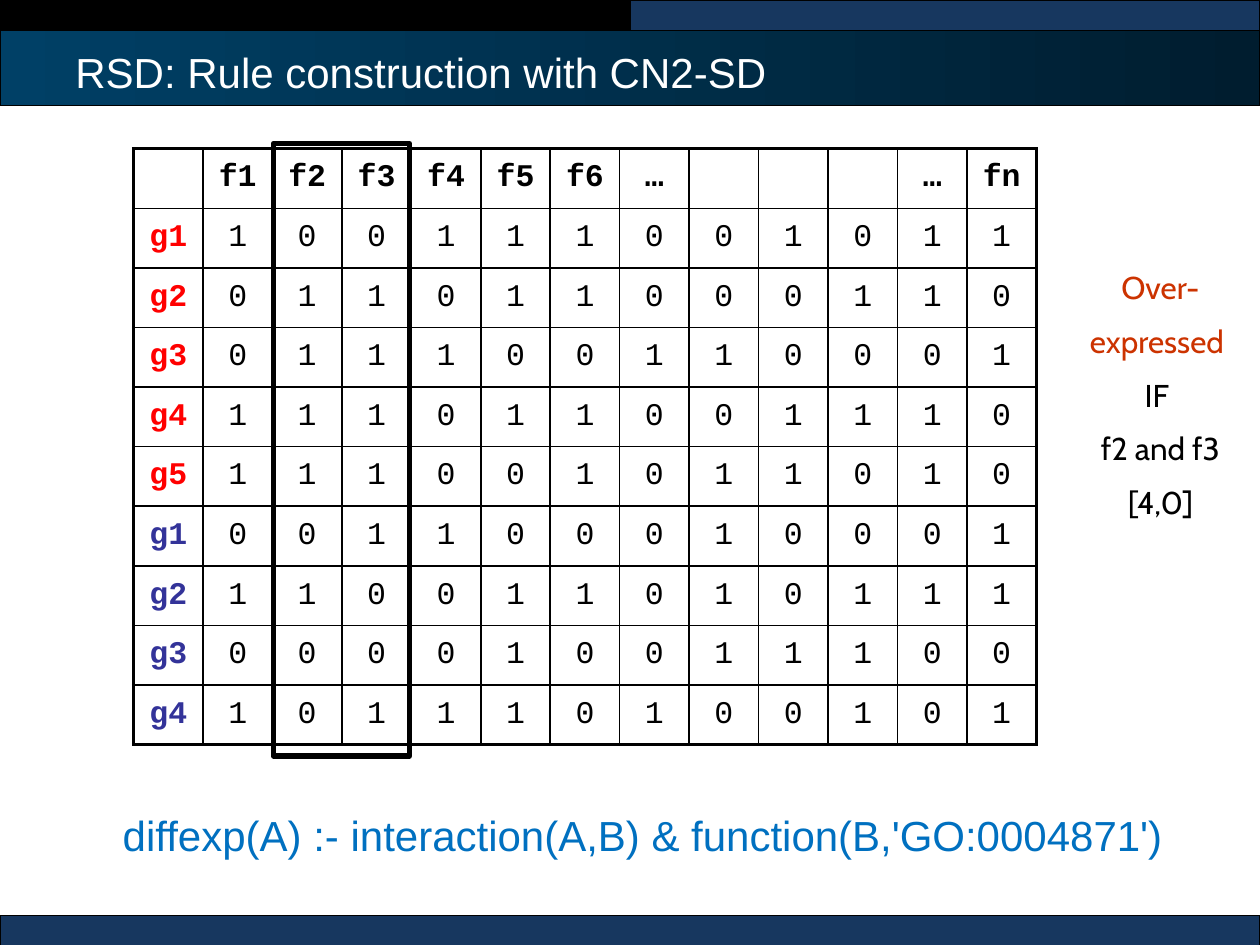
import pptx
import pptx.util
import pptx.dml.color
import pptx.enum.shapes
import pptx.enum.text
import pptx.oxml
from pptx.oxml.ns import qn

Pt = pptx.util.Pt
ALIGN = pptx.enum.text.PP_ALIGN
ANCHOR = pptx.enum.text.MSO_ANCHOR

# Content
TITLE = "RSD: Rule construction with CN2-SD"
FORMULA = "diffexp(A) :- interaction(A,B) & function(B,'GO:0004871') "
FEATURES = ["", "f1", "f2", "f3", "f4", "f5", "f6", "…", "", "", "", "…", "fn"]
GENES = [  # gene, class, feature values
    ("g1", "over", "100111001011"),
    ("g2", "over", "011011000110"),
    ("g3", "over", "011100110001"),
    ("g4", "over", "111011001110"),
    ("g5", "over", "111001011010"),
    ("g1", "other", "001100010001"),
    ("g2", "other", "110011010111"),
    ("g3", "other", "000010011100"),
    ("g4", "other", "101110100101"),
]
RULE = [("Over-", "rule"), ("expressed ", "rule"), ("IF ", "text"),
        ("f2 and f3", "text"), ("[4,0]", "text")]

THEME = {
    "text": "000000", "title": "FFFFFF", "formula": "0070C0", "rule": "CC3300",
    "over": "FF0000", "other": "333399", "line": "000000",
    "navy": "17375F", "black": "000000", "header": ("004066", "001D2F"),
    "heading_size": 24, "body_size": 18,
    "font": "Arial", "mono": "Courier New", "rule_font": "Cabin",
    "thin": 1, "thick": 2.25, "band_line": 0.75, "frame_line": 3,
}

# Layout, in points: left, top, width, height
WIDTH, HEIGHT = 720, 540
BANDS = [
    ((0, 15.1, WIDTH, 45.4), "header"),
    ((0, 523.2, WIDTH, 17.3), "navy"),
    ((0, 0, WIDTH / 2, 17.3), "black"),
    ((WIDTH / 2, 0, WIDTH / 2, 17.3), "navy"),
]
FORMULA_BOX = (-23.8, 462.2, 702, 37.4)
TITLE_BOX = (36, 21.6, 648, 38.2)
TABLE_BOX = (76.3, 85, 516.2, 340.6)
RULE_BOX = (594, 149.8, 138.2, 159.8)
FRAME_BOX = (156.2, 82, 77.8, 350)


def rgb(name):
    return pptx.dml.color.RGBColor.from_string(THEME[name])


def place(box):
    return [Pt(v) for v in box]


def add_run(p, text, color, size, font, bold=False):
    r = p.add_run()
    r.text = text
    r.font.size = Pt(THEME[size])
    r.font.name = THEME[font]
    r.font.bold = bold
    r.font.color.rgb = rgb(color)


def add_rect(s, box, weight):
    sp = s.shapes.add_shape(pptx.enum.shapes.MSO_SHAPE.RECTANGLE, *place(box))
    sp.shadow.inherit = False
    sp.line.color.rgb = rgb("line")
    sp.line.width = Pt(THEME[weight])
    return sp


def add_band(s, box, fill):
    sp = add_rect(s, box, "band_line")
    if fill != "header":
        sp.fill.solid()
        sp.fill.fore_color.rgb = rgb(fill)
        return
    sp.fill.gradient()
    sp.fill.gradient_angle = 0
    for stop, color in zip(sp.fill.gradient_stops, THEME[fill]):
        stop.color.rgb = pptx.dml.color.RGBColor.from_string(color)


def add_text(s, box, lines, size, font, align, anchor=ANCHOR.TOP, before=0, spacing=None):
    tf = s.shapes.add_textbox(*place(box)).text_frame
    tf.word_wrap = True
    tf.vertical_anchor = anchor
    for i, (text, color) in enumerate(lines):
        p = tf.paragraphs[0] if i == 0 else tf.add_paragraph()
        p.alignment = align
        if spacing:
            p.line_spacing = spacing
        if i and before:
            p.space_before = Pt(before)
        add_run(p, text, color, size, font)


def set_borders(cell, thick_sides):
    props = cell._tc.get_or_add_tcPr()
    for i, side in enumerate(("lnL", "lnR", "lnT", "lnB")):
        weight = THEME["thick" if side in thick_sides else "thin"]
        ln = pptx.oxml.parse_xml(
            f'<a:{side} xmlns:a="http://schemas.openxmlformats.org/drawingml/2006/main" '
            f'w="{Pt(weight)}"><a:solidFill><a:srgbClr val="{THEME["line"]}"/>'
            f'</a:solidFill></a:{side}>')
        props.insert(i, ln)


def add_gene_table(s):
    rows = [[(name, "text", True) for name in FEATURES]]
    for gene, group, values in GENES:
        rows.append([(gene, group, True)] + [(v, "text", False) for v in values])
    n_rows, n_cols = len(rows), len(FEATURES)
    frame = s.shapes.add_table(n_rows, n_cols, *place(TABLE_BOX))
    table = frame.table
    table.first_row = table.horz_banding = False
    for col in table.columns:
        col.width = Pt(TABLE_BOX[2] / n_cols)
    for row in table.rows:
        row.height = Pt(TABLE_BOX[3] / n_rows)
    for i, row in enumerate(rows):
        for j, (text, color, bold) in enumerate(row):
            cell = table.cell(i, j)
            cell.fill.background()
            cell.vertical_anchor = ANCHOR.MIDDLE
            edges = {"lnL": j == 0, "lnR": j == n_cols - 1,
                     "lnT": i == 0, "lnB": i == n_rows - 1}
            set_borders(cell, [side for side, outer in edges.items() if outer])
            if text:
                p = cell.text_frame.paragraphs[0]
                p.alignment = ALIGN.CENTER
                add_run(p, text, color, "body_size", "mono", bold)


def main():
    prs = pptx.Presentation()
    prs.slide_width, prs.slide_height = Pt(WIDTH), Pt(HEIGHT)
    s = prs.slides.add_slide(prs.slide_layouts[6])

    # Header and footer bands
    for box, fill in BANDS:
        add_band(s, box, fill)

    # Formula and title
    add_text(s, FORMULA_BOX, [(FORMULA, "formula")], "heading_size", "font",
             ALIGN.RIGHT, spacing=0.9)
    add_text(s, TITLE_BOX, [(TITLE, "title")], "heading_size", "font",
             ALIGN.LEFT, ANCHOR.MIDDLE)

    # Gene table, induced rule, and frame around the rule's features
    add_gene_table(s)
    add_text(s, RULE_BOX, RULE, "body_size", "rule_font", ALIGN.CENTER, before=9)
    add_rect(s, FRAME_BOX, "frame_line").fill.background()

    prs.save("out.pptx")


if __name__ == "__main__":
    main()
